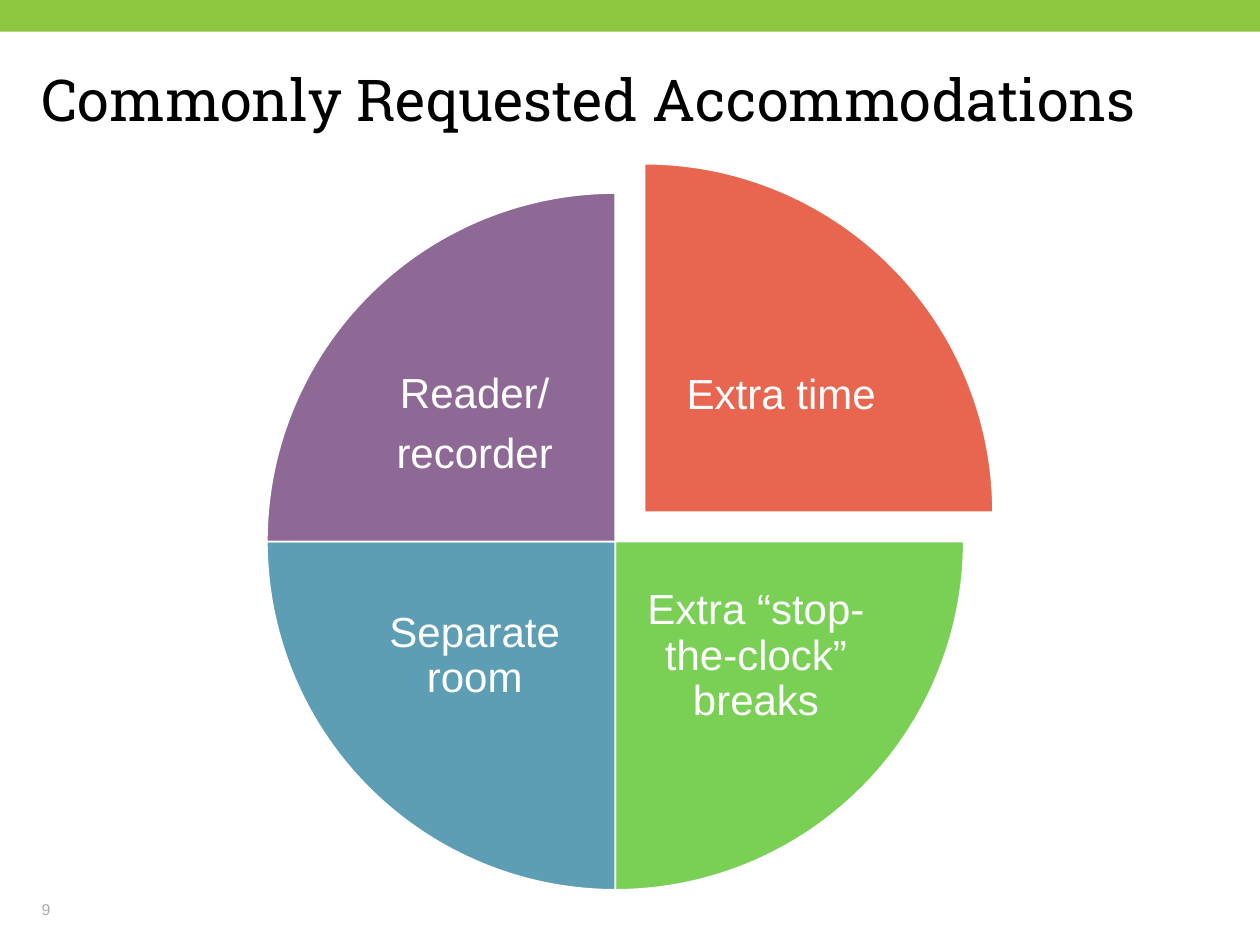
"""Build the slide of commonly requested accommodations."""
import dataclasses

import pptx
import pptx.dml.color
import pptx.enum.shapes
import pptx.enum.text
import pptx.util

Cm = pptx.util.Cm
Pt = pptx.util.Pt
Color = pptx.dml.color.RGBColor.from_string
Align = pptx.enum.text.PP_ALIGN
Anchor = pptx.enum.text.MSO_ANCHOR
Shape = pptx.enum.shapes.MSO_SHAPE


@dataclasses.dataclass(frozen=True)
class Theme:
    bar: str = "8DC63F"
    ink: str = "000000"
    white: str = "FFFFFF"
    gray: str = "AFABAB"
    red: str = "E86650"
    green: str = "79D055"
    blue: str = "5D9EB5"
    plum: str = "8E6996"
    serif: str = "Roboto Slab"
    sans: str = "Arial"
    head: float = 33
    label: float = 24
    foot: float = 9


LOOK = Theme()
SIZE = 14.05
TURN = 54
TITLE = {"line_spacing": 0.9}
LABEL = {"alignment": Align.CENTER, "line_spacing": 0.9, "space_after": Pt(8.4)}
PARTS = (
    (LOOK.red, 3, (5.97, 3.3), (13.16, 5.89), "Extra time"),
    (LOOK.green, 0, (5.38, 3.89), (12.65, 11.15), "Extra “stop-the-clock” breaks"),
    (LOOK.blue, 1, (5.38, 3.89), (6.98, 11.15), "Separate room"),
    (LOOK.plum, 2, (5.38, 3.89), (6.98, 6.48), "Reader/\nrecorder"),
)


def put(item, vals):
    for key, val in vals.items():
        setattr(item, key, val)


def draw(shapes, kind, box, fill):
    shape = shapes.add_shape(kind, *map(Cm, box))
    shape.shadow.inherit = False
    shape.fill.solid()
    shape.fill.fore_color.rgb = Color(fill)
    shape.line.fill.background()
    return shape


def write(shapes, box, text, face, size, tint, form, anchor=Anchor.TOP, pad=0):
    frame = shapes.add_textbox(*map(Cm, box)).text_frame
    sides = ("left", "top", "right", "bottom")
    put(frame, {f"margin_{side}": Cm(pad) for side in sides})
    put(frame, {"word_wrap": True, "vertical_anchor": anchor, "text": text})
    for para in frame.paragraphs:
        put(para, form)
        put(para.font, {"name": face, "size": Pt(size)})
        para.font.color.rgb = Color(tint)


def wedge(shapes, fill, turn, spot, place, text):
    shape = draw(shapes, Shape.PIE, (*spot, SIZE, SIZE), fill)
    shape.adjustments[0] = turn * TURN
    shape.adjustments[1] = (turn + 1) % 4 * TURN
    shape.line.color.rgb = Color(LOOK.white)
    shape.line.width = Pt(1)
    write(shapes, (*place, 5.18, 4.17), text, LOOK.sans, LOOK.label,
          LOOK.white, LABEL, Anchor.MIDDLE, 0.08)


def main():
    deck = pptx.Presentation()
    put(deck, {"slide_width": Cm(25.4), "slide_height": Cm(19.05)})
    shapes = deck.slides.add_slide(deck.slide_layouts[6]).shapes
    draw(shapes, Shape.RECTANGLE, (0, 0, 25.4, 0.64), LOOK.bar)
    write(shapes, (0.84, 1.45, 23.65, 3.23), "Commonly Requested Accommodations",
          LOOK.serif, LOOK.head, LOOK.ink, TITLE)
    pie = shapes.add_group_shape().shapes
    for part in PARTS:
        wedge(pie, *part)
    write(shapes, (0.84, 17.91, 5.72, 0.61), "9",
          LOOK.sans, LOOK.foot, LOOK.gray, {}, Anchor.BOTTOM)
    deck.save("out.pptx")


if __name__ == "__main__":
    main()
